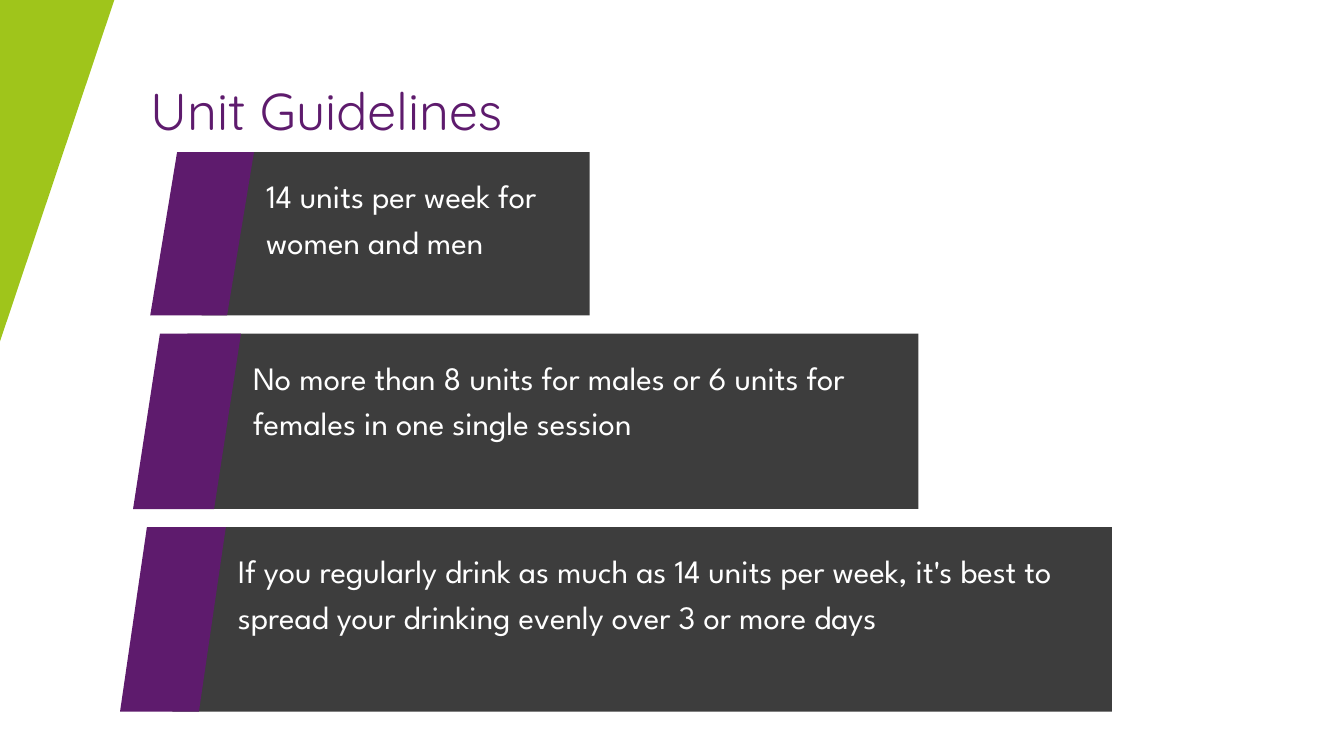
from pptx import Presentation
from pptx.dml.color import RGBColor
from pptx.enum.shapes import MSO_SHAPE
from pptx.enum.text import MSO_ANCHOR, PP_ALIGN
from pptx.util import Inches, Pt

RECTANGLE = MSO_SHAPE.RECTANGLE
TOP = MSO_ANCHOR.TOP
LEFT = PP_ALIGN.LEFT

COLOURS = {
    "green": "9FC51B",
    "purple": "5E1B6D",
    "charcoal": "3D3D3D",
    "white": "FFFFFF",
}

CARDS_TOP = 20.13
CARD_GAP = 2.4
TAB_SLANT = 2
TEXT_GAP = 0.9
TEXT_DROP = 2.3
TEXT_HEIGHT = 12

CARDS = [
    {"height": 21.6, "tab": (11.18, 18.9), "bar": (15, 43.88), "text_width": 20.55,
     "text": "14 units per week for women and men"},
    {"height": 23.2, "tab": (9.9, 17.93), "bar": (13.95, 68.33), "text_width": 49.5,
     "text": "No more than 8 units for males or 6 units for females in one single session"},
    {"height": 24.4, "tab": (8.93, 16.8), "bar": (12.83, 82.73), "text_width": 62.33,
     "text": "If you regularly drink as much as 14 units per week, it's best to "
             "spread your drinking evenly over 3 or more days"},
]


class GuidelineSlide:
    def __init__(self, deck):
        self.width = deck.slide_width
        self.height = deck.slide_height
        self.page = deck.slides.add_slide(deck.slide_layouts[6])

    def across(self, percent):
        return round(self.width * percent / 100)

    def down(self, percent):
        return round(self.height * percent / 100)

    def colour(self, name):
        return RGBColor.from_string(COLOURS[name])

    def paint(self, shape, fill):
        shape.shadow.inherit = False
        shape.fill.solid()
        shape.fill.fore_color.rgb = self.colour(fill)
        shape.line.fill.background()

    def slanted(self, left, top, right, height, slant, fill):
        bottom = top + height
        corners = [(left + slant, top), (right, top), (right - slant, bottom), (left, bottom)]
        points = [(self.across(x), self.down(y)) for x, y in corners]
        builder = self.page.shapes.build_freeform(*points[0])
        builder.add_line_segments(points[1:], close=True)
        self.paint(builder.convert_to_shape(), fill)

    def bar(self, left, top, right, height, fill):
        shape = self.page.shapes.add_shape(
            RECTANGLE, self.across(left), self.down(top),
            self.across(right - left), self.down(height))
        self.paint(shape, fill)

    def text(self, text, *, left, top, width, height, font, size, spacing, colour):
        box = self.page.shapes.add_textbox(
            self.across(left), self.down(top), self.across(width), self.down(height))
        frame = box.text_frame
        frame.word_wrap = True
        frame.vertical_anchor = TOP
        frame.margin_left = frame.margin_right = frame.margin_top = frame.margin_bottom = 0
        para = frame.paragraphs[0]
        para.alignment = LEFT
        para.line_spacing = Pt(spacing)
        span = para.add_run()
        span.text = text
        span.font.name = font
        span.font.size = Pt(size)
        span.font.color.rgb = self.colour(colour)

    def card(self, top, height, tab, bar, text_width, text):
        tab_left, tab_right = tab
        bar_left, bar_right = bar
        self.bar(bar_left, top, bar_right, height, "charcoal")
        self.slanted(tab_left, top, tab_right, height, TAB_SLANT, "purple")
        self.text(text, left=tab_right + TEXT_GAP, top=top + TEXT_DROP,
                  width=text_width, height=TEXT_HEIGHT, font="League Spartan",
                  size=23.3, spacing=32.6, colour="white")


def main():
    deck = Presentation()
    deck.slide_width = Inches(13.33)
    deck.slide_height = Inches(7.5)
    slide = GuidelineSlide(deck)

    slide.slanted(-40.73, -2.27, 8.93, 66.13, 12.45, "green")
    slide.text("Unit Guidelines", left=11.18, top=9.07, width=44.78, height=9.07,
               font="Quicksand", size=37, spacing=51.3, colour="purple")

    top = CARDS_TOP
    for card in CARDS:
        slide.card(top, **card)
        top += card["height"] + CARD_GAP

    deck.save("out.pptx")


if __name__ == "__main__":
    main()
